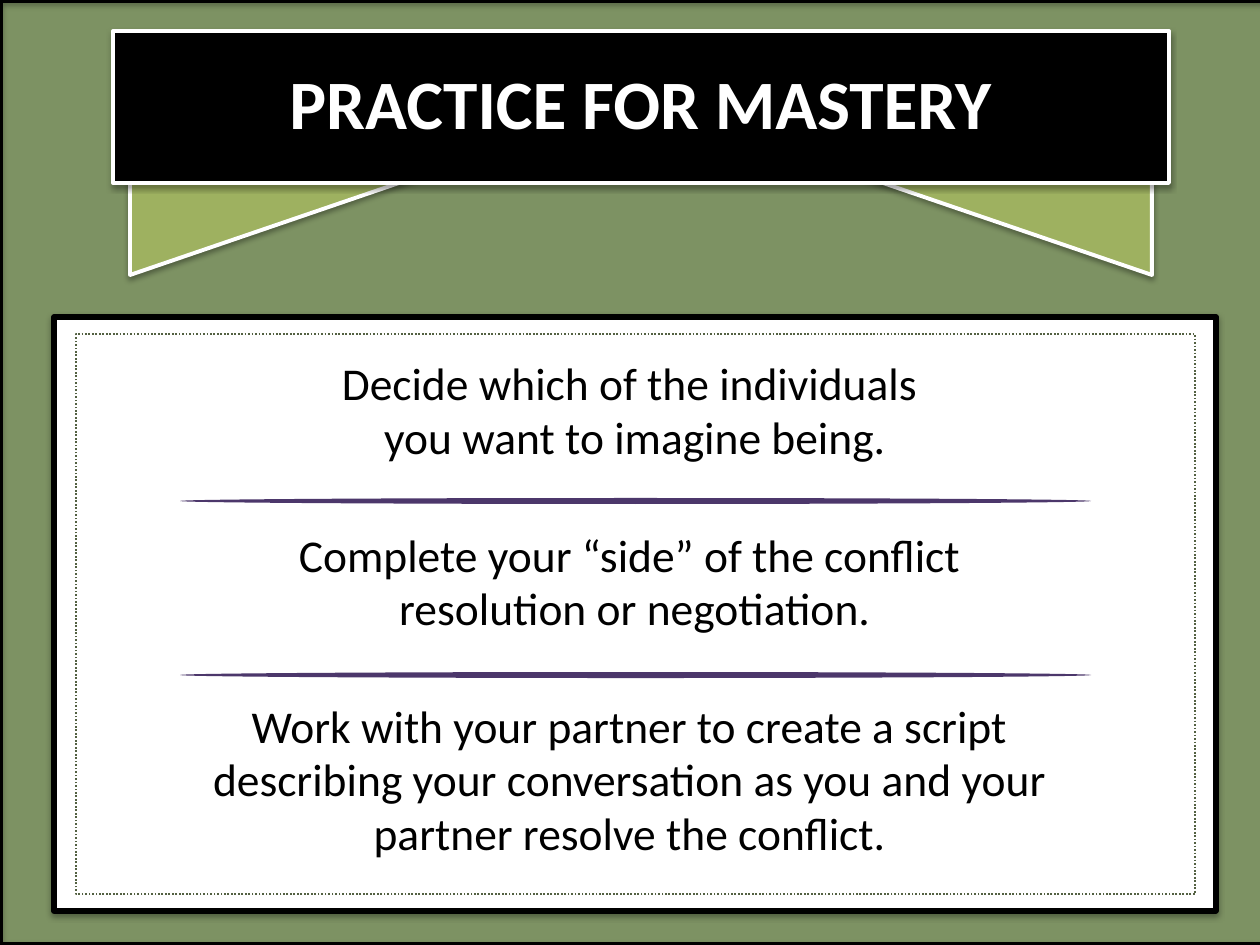
"""Build the Practice for Mastery slide with its banner and instruction card."""
from dataclasses import dataclass

import pptx
import pptx.dml.color
import pptx.enum.dml
import pptx.enum.shapes
import pptx.enum.text
import pptx.oxml
import pptx.oxml.ns
import pptx.util


@dataclass(frozen=True)
class Theme:
    font: str = "Calibri"
    title_size: float = 39.6
    body_size: float = 26
    paragraph_gap: float = 36.7
    black: str = "000000"
    white: str = "FFFFFF"
    backdrop: str = "7D9263"
    backdrop_edge: str = "A1B28E"
    ribbon: str = "9EB160"
    dots: str = "536142"
    divider: str = "4C376B"


THEME = Theme()
PX = 914400 / 126
SHAPES = pptx.enum.shapes.MSO_SHAPE
CENTER = pptx.enum.text.PP_ALIGN.CENTER
SHADOW = (
    f'<a:outerShdw {pptx.oxml.ns.nsdecls("a")} blurRad="40000" dist="23000" '
    'dir="5400000" rotWithShape="0"><a:srgbClr val="000000">'
    '<a:alpha val="35000"/></a:srgbClr></a:outerShdw>'
)


def add_panel(kind, box, fill, line=None, width=0, shadow=True):
    shape = slide.shapes.add_shape(kind, *(round(value * PX) for value in box))
    shape.shadow.inherit = False
    if shadow:
        effects = shape.element.spPr.find(pptx.oxml.ns.qn("a:effectLst"))
        effects.append(pptx.oxml.parse_xml(SHADOW))
    if fill:
        shape.fill.solid()
        shape.fill.fore_color.rgb = pptx.dml.color.RGBColor.from_string(fill)
    else:
        shape.fill.background()
    if line:
        shape.line.color.rgb = pptx.dml.color.RGBColor.from_string(line)
        shape.line.width = pptx.util.Pt(width)
    else:
        shape.line.fill.background()
    return shape


def style_font(paragraph, size, color, bold=False):
    paragraph.alignment = CENTER
    for run in paragraph.runs:
        run.font.name = THEME.font
        run.font.size = pptx.util.Pt(size)
        run.font.bold = bold
        run.font.color.rgb = pptx.dml.color.RGBColor.from_string(color)


presentation = pptx.Presentation()
presentation.slide_width = round(1260 * PX)
presentation.slide_height = round(945 * PX)
slide = presentation.slides.add_slide(presentation.slide_layouts[5])

backdrop_box = (0, 0, 1270, 945)
add_panel(SHAPES.RECTANGLE, backdrop_box, THEME.backdrop, THEME.backdrop_edge, 0.75)
add_panel(SHAPES.RECTANGLE, backdrop_box, None, THEME.black, 3)
add_panel(SHAPES.RECTANGLE, (54, 317, 1162, 594), THEME.white, THEME.black, 3)
dotted_frame = add_panel(
    SHAPES.RECTANGLE, (76, 334, 1119, 560), THEME.white, THEME.dots, 1, shadow=False
)
dotted_frame.line.dash_style = pptx.enum.dml.MSO_LINE.ROUND_DOT

for left, flips in ((130, ["flipV"]), (845, ["flipH", "flipV"])):
    ribbon = add_panel(
        SHAPES.RIGHT_TRIANGLE, (left, 170, 307, 105), THEME.ribbon, THEME.white, 2.25
    )
    for flip in flips:
        ribbon.element.spPr.xfrm.set(flip, "1")

instructions = [
    "Decide which of the individuals \nyou want to imagine being.",
    "Complete your “side” of the conflict \nresolution or negotiation.",
    "Work with your partner to create a script \n"
    "describing your conversation as you and your \n"
    "partner resolve the conflict. ",
]
body = slide.shapes.add_textbox(*(round(value * PX) for value in (107, 352, 1056, 564)))
text_frame = body.text_frame
text_frame.word_wrap = True
for index, instruction in enumerate(instructions):
    paragraph = text_frame.add_paragraph() if index else text_frame.paragraphs[0]
    paragraph.text = instruction
    paragraph.line_spacing = 0.98
    if index:
        paragraph.space_before = pptx.util.Pt(THEME.paragraph_gap)
    style_font(paragraph, THEME.body_size, THEME.black)

add_panel(SHAPES.RECTANGLE, (113, 31, 1056, 152), THEME.black, THEME.white, 2.25)

title = slide.shapes.title
title.left, title.top, title.width, title.height = (
    round(value * PX) for value in (175, 48, 931, 107)
)
title.text_frame.text = "PRACTICE FOR MASTERY"
title.text_frame.vertical_anchor = pptx.enum.text.MSO_ANCHOR.MIDDLE
style_font(title.text_frame.paragraphs[0], THEME.title_size, THEME.white, bold=True)
slide.shapes.element.append(title.element)

for top in (498, 672):
    add_panel(SHAPES.OVAL, (180, top, 911, 6), THEME.divider, shadow=False)

presentation.save("out.pptx")
